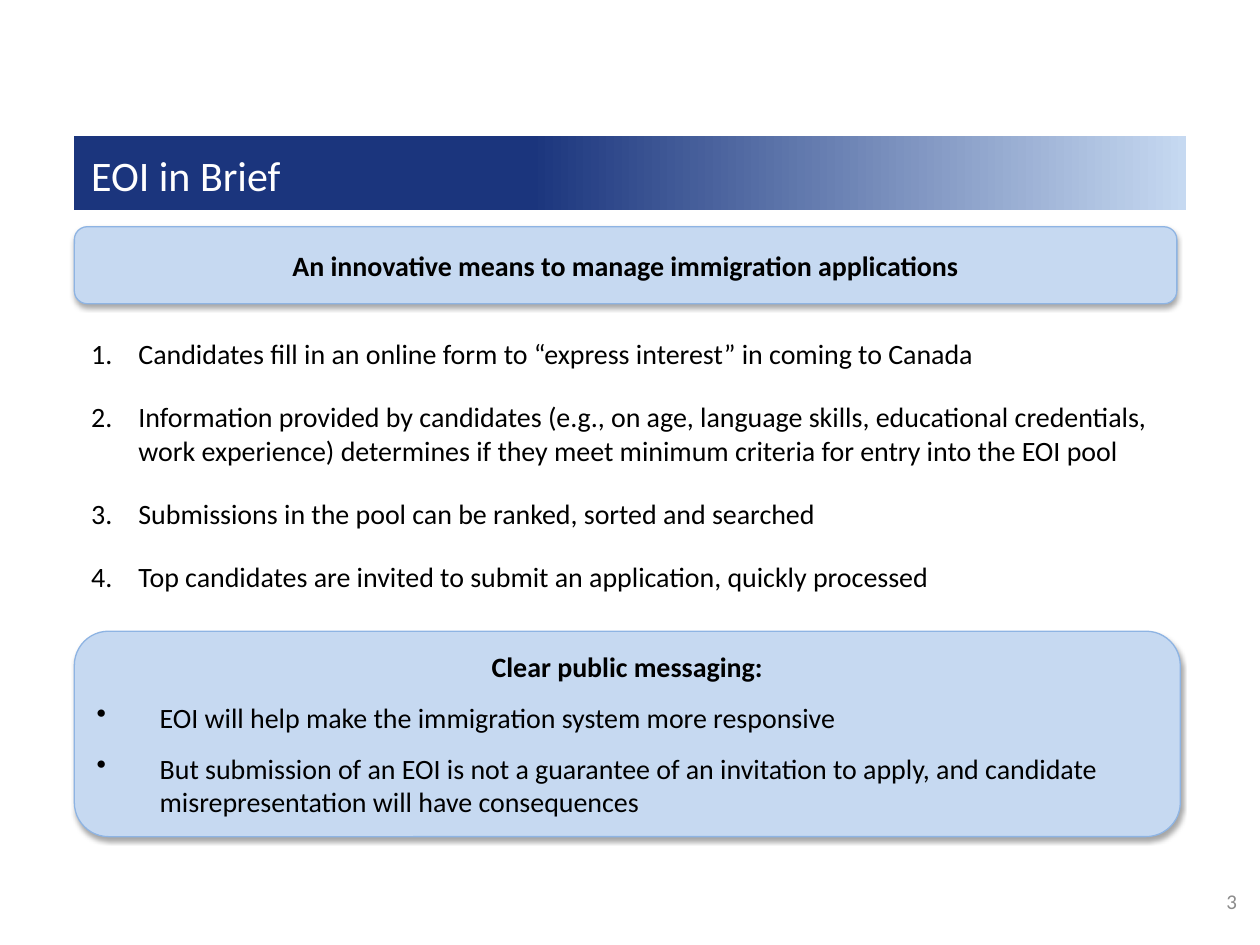
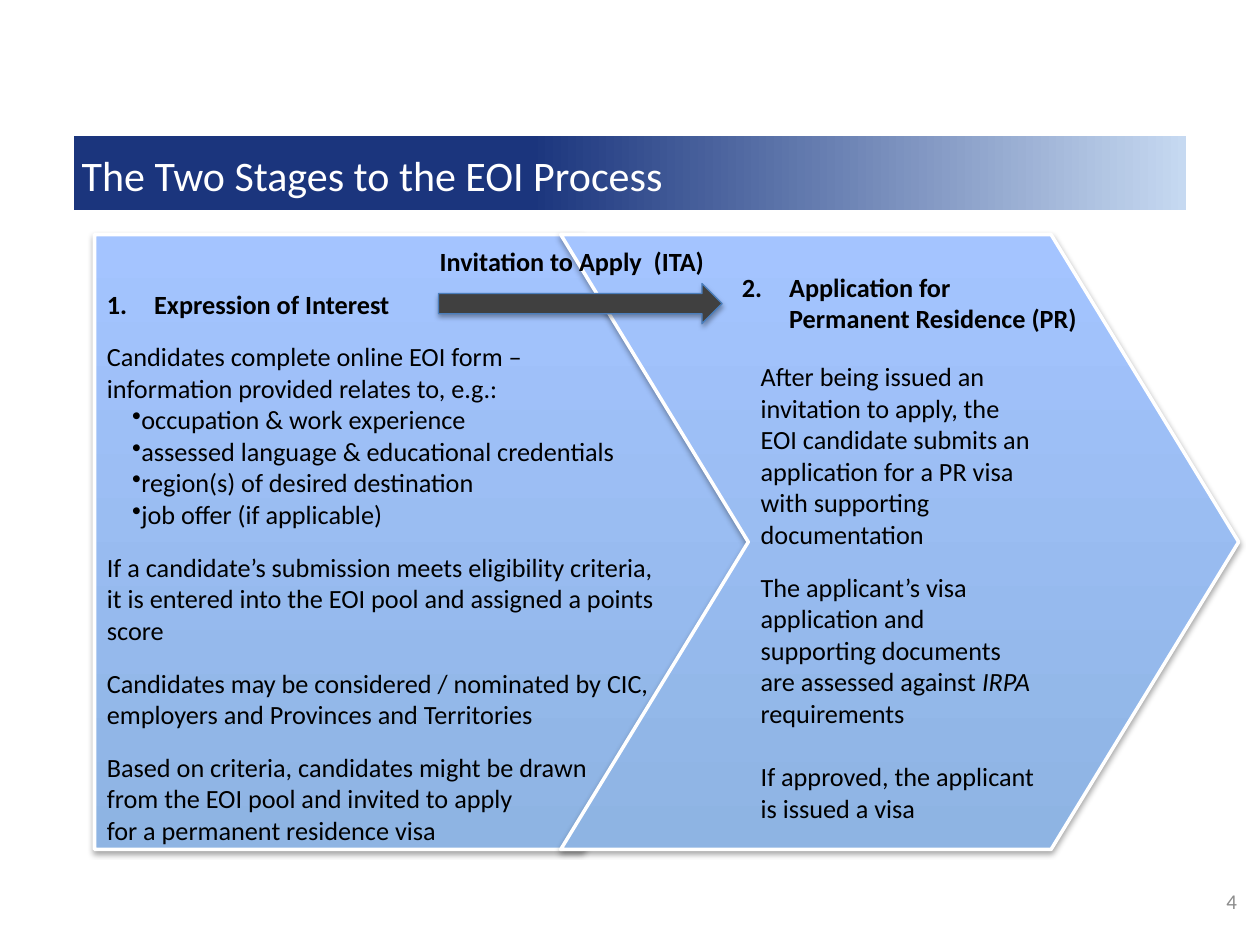
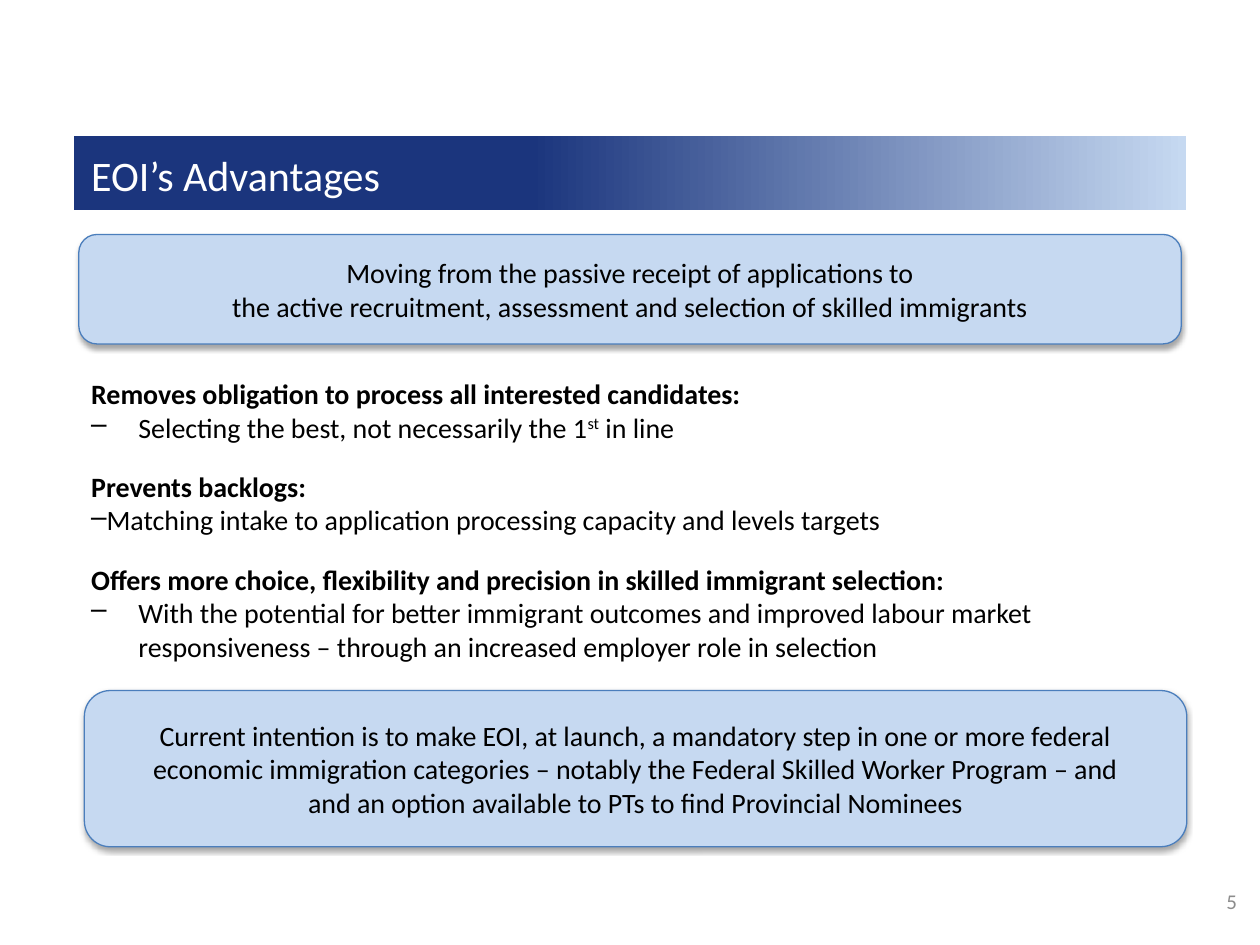
from dataclasses import dataclass
from typing import Optional

import pptx
import pptx.dml.color
import pptx.enum.shapes
import pptx.enum.text
import pptx.oxml
import pptx.oxml.ns
import pptx.util
from lxml import etree

Pt = pptx.util.Pt
Shapes = pptx.enum.shapes.MSO_SHAPE
Anchor = pptx.enum.text.MSO_ANCHOR
Align = pptx.enum.text.PP_ALIGN

FONT = "Calibri"
BLACK, WHITE, GREY = "000000", "FFFFFF", "8C8C8C"
NAVY, PALE_BLUE = "1B357D", "C6D9F1"
SOFT_BLUE, STRONG_BLUE = "8EB4E3", "4B7EBC"
STAGE_TOP, ARROW_GREY = "A4C4FF", "404040"
HANGING = 27
BULLET, DASH, NUMBER = "•", "–", "1."


@dataclass(frozen=True)
class Box:
    left: float
    top: float
    width: float
    height: float


@dataclass(frozen=True)
class Span:
    text: str
    italic: bool = False
    superscript: bool = False


@dataclass(frozen=True)
class Line:
    text: str
    bold: bool = False
    before: float = 0
    marker: str = ""
    start: int = 1
    margin: float = 0
    indent: float = 0
    align: Optional[Align] = None
    tail: tuple[Span, ...] = ()


@dataclass(frozen=True)
class Panel:
    box: Box
    lines: tuple[Line, ...] = ()
    size: float = 16
    kind: Shapes = Shapes.ROUNDED_RECTANGLE
    fill: str = PALE_BLUE
    gradient_end: str = ""
    line: str = SOFT_BLUE
    line_width: float = 0.75
    anchor: Anchor = Anchor.MIDDLE
    top_inset: float = 3.6
    adjustment: Optional[float] = None


@dataclass(frozen=True)
class Label:
    box: Box
    lines: tuple[Line, ...]
    size: float = 16
    color: str = BLACK
    anchor: Anchor = Anchor.TOP


@dataclass(frozen=True)
class Page:
    title: str
    number: int
    items: tuple[Panel | Label, ...]
    title_left: float = 45


def color_of(value: str) -> pptx.dml.color.RGBColor:
    return pptx.dml.color.RGBColor.from_string(value)


def hanging(text: str, marker: str, before: float = 0, margin: float = HANGING, **options) -> Line:
    return Line(text, marker=marker, before=before, margin=margin, indent=-margin, **options)


def centred(text: str, bold: bool = False) -> Line:
    return Line(text, bold=bold, align=Align.CENTER)


def add_marker(paragraph, line: Line) -> None:
    properties = paragraph._p.get_or_add_pPr()
    properties.set("marL", str(Pt(line.margin)))
    properties.set("indent", str(Pt(line.indent)))
    if line.marker == NUMBER:
        marker = etree.SubElement(properties, pptx.oxml.ns.qn("a:buAutoNum"), type="arabicPeriod")
        if line.start > 1:
            marker.set("startAt", str(line.start))
    elif line.marker:
        etree.SubElement(properties, pptx.oxml.ns.qn("a:buChar"), char=line.marker)


def write_lines(text_frame, lines: tuple[Line, ...], size: float, color: str) -> None:
    text_frame.word_wrap = True
    for index, line in enumerate(lines):
        paragraph = text_frame.add_paragraph() if index else text_frame.paragraphs[0]
        paragraph.text = line.text
        add_marker(paragraph, line)
        paragraph.alignment = line.align or Align.LEFT
        if line.before:
            paragraph.space_before = Pt(line.before)
        for span in line.tail:
            run = paragraph.add_run()
            run.text = span.text
            run.font.italic = span.italic
            if span.superscript:
                run._r.get_or_add_rPr().set("baseline", "30000")
        for run in paragraph.runs:
            run.font.name = FONT
            run.font.size = Pt(size)
            run.font.bold = line.bold
            run.font.color.rgb = color_of(color)


def place(box: Box) -> tuple:
    return Pt(box.left), Pt(box.top), Pt(box.width), Pt(box.height)


def fill_gradient(shape, start: str, end: str, angle: float, first_stop: float = 0) -> None:
    shape.fill.gradient()
    shape.fill.gradient_angle = angle
    stops = shape.fill.gradient_stops
    for stop, color, position in zip(stops, (start, end), (first_stop, 1)):
        stop.color.rgb = color_of(color)
        stop.position = position


def add_shadow(shape) -> None:
    shape.shadow.inherit = False
    effects = shape._element.spPr.find(pptx.oxml.ns.qn("a:effectLst"))
    effects.append(pptx.oxml.parse_xml(
        f'<a:outerShdw {pptx.oxml.ns.nsdecls("a")} blurRad="{Pt(3.1)}" dist="{Pt(1.8)}" '
        'dir="5400000" rotWithShape="0"><a:srgbClr val="000000"><a:alpha val="35000"/>'
        '</a:srgbClr></a:outerShdw>'))


def draw_panel(slide, panel: Panel) -> None:
    shape = slide.shapes.add_shape(panel.kind, *place(panel.box))
    if panel.adjustment is not None:
        shape.adjustments[0] = panel.adjustment
    if panel.gradient_end:
        fill_gradient(shape, panel.fill, panel.gradient_end, 90)
    else:
        shape.fill.solid()
        shape.fill.fore_color.rgb = color_of(panel.fill)
    shape.line.color.rgb = color_of(panel.line)
    shape.line.width = Pt(panel.line_width)
    add_shadow(shape)
    shape.text_frame.vertical_anchor = panel.anchor
    shape.text_frame.margin_top = Pt(panel.top_inset)
    write_lines(shape.text_frame, panel.lines, panel.size, BLACK)


def draw_label(slide, label: Label) -> None:
    shape = slide.shapes.add_textbox(*place(label.box))
    shape.text_frame.vertical_anchor = label.anchor
    write_lines(shape.text_frame, label.lines, label.size, label.color)


def draw_page(presentation, page: Page) -> None:
    slide = presentation.slides.add_slide(presentation.slide_layouts[6])
    band = slide.shapes.add_shape(Shapes.RECTANGLE, *place(Box(42.3, 77.7, 635.5, 42.3)))
    band.shadow.inherit = False
    band.line.fill.background()
    fill_gradient(band, NAVY, PALE_BLUE, 0, 0.41)
    draw_label(slide, Label(Box(page.title_left, 75.6, 630, 48), (Line(page.title),),
                            24, WHITE, Anchor.MIDDLE))
    for item in page.items:
        if isinstance(item, Panel):
            draw_panel(slide, item)
        else:
            draw_label(slide, item)
    draw_label(slide, Label(Box(648, 500.4, 66, 28.8),
                            (Line(str(page.number), align=Align.RIGHT),),
                            12, GREY, Anchor.MIDDLE))


def stage(box: Box, kind: Shapes, adjustment: float, top_inset: float,
          lines: tuple[Line, ...]) -> Panel:
    return Panel(box, lines, 15, kind, SOFT_BLUE, STAGE_TOP, WHITE, 2,
                 Anchor.TOP, top_inset, adjustment)


STEP_GAP, MESSAGE_GAP, STAGE_GAP, TOPIC_GAP = 17, 9.8, 12.2, 14.6

BRIEF = Page("EOI in Brief", 3, (
    Label(Box(45, 188.6, 630, 154.8), (
        hanging("Candidates fill in an online form to “express interest” in coming to Canada", NUMBER),
        hanging("Information provided by candidates (e.g., on age, language skills, educational "
                "credentials, work experience) determines if they meet minimum criteria for entry "
                "into the EOI pool", NUMBER, STEP_GAP),
        hanging("Submissions in the pool can be ranked, sorted and searched", NUMBER, STEP_GAP),
        hanging("Top candidates are invited to submit an application, quickly processed",
                NUMBER, STEP_GAP),
    )),
    Panel(Box(42.5, 360.7, 632, 117.4), (
        centred("Clear public messaging:", bold=True),
        hanging("EOI will help make the immigration system more responsive",
                BULLET, MESSAGE_GAP, 36),
        hanging("But submission of an EOI is not a guarantee of an invitation to apply, and "
                "candidate misrepresentation will have consequences", BULLET, MESSAGE_GAP, 36),
    )),
    Panel(Box(42.5, 129.6, 630, 44),
          (centred("An innovative means to manage immigration applications", bold=True),)),
))

FORM_TOPICS = (
    "occupation & work experience",
    "assessed language & educational credentials",
    "region(s) of desired destination",
    "job offer (if applicable)",
)

STAGES = Page("The Two Stages to the EOI Process", 4, (
    stage(Box(54, 134, 385.2, 351.4), Shapes.PENTAGON, 0.303, 30.5, (
        hanging("Expression of Interest", NUMBER, bold=True),
        Line("Candidates complete online EOI form –", before=STAGE_GAP),
        Line("information provided relates to, e.g.:"),
        *(Line(topic, marker=BULLET, indent=14.4) for topic in FORM_TOPICS),
        Line("If a candidate’s submission meets eligibility criteria, it is entered into the "
             "EOI pool and assigned a points score", before=STAGE_GAP),
        Line("Candidates may be considered / nominated by CIC, employers and Provinces and "
             "Territories", before=STAGE_GAP),
        Line("Based on criteria, candidates might be drawn", before=STAGE_GAP),
        Line("from the EOI pool and invited to apply"),
        Line("for a permanent residence visa"),
    )),
    stage(Box(320.4, 134, 387.4, 351.4), Shapes.CHEVRON, 0.305, 72, (
        Line("After being issued an invitation to apply, the EOI candidate submits an "
             "application for a PR visa with supporting documentation"),
        Line("The applicant’s visa application and supporting documents are assessed against ",
             before=STAGE_GAP, tail=(Span("IRPA ", italic=True), Span("requirements"))),
        Line("If approved, the applicant is issued a visa", before=18.3),
    )),
    Label(Box(416.9, 151.2, 221, 43.9), (
        hanging("Application for", NUMBER, start=2, bold=True),
        Line("Permanent Residence (PR)", bold=True, margin=HANGING),
    ), 15),
    Label(Box(235.4, 136.8, 182.9, 25.2), (centred("Invitation to Apply  (ITA)", bold=True),), 15),
    Panel(Box(250.6, 162, 162, 23), kind=Shapes.RIGHT_ARROW, fill=ARROW_GREY, line=STRONG_BLUE),
), title_left=39.6)

ADVANTAGES = Page("EOI’s Advantages", 5, (
    Label(Box(45, 211.7, 638, 172), (
        Line("Removes obligation to process all interested candidates:", bold=True),
        hanging("Selecting the best, not necessarily the 1", DASH,
                tail=(Span("st", superscript=True), Span(" in line"))),
        Line("Prevents backlogs:", bold=True, before=TOPIC_GAP),
        Line("Matching intake to application processing capacity and levels targets", marker=DASH),
        Line("Offers more choice, flexibility and precision in skilled immigrant selection:",
             bold=True, before=TOPIC_GAP),
        hanging("With the potential for better immigrant outcomes and improved labour market "
                "responsiveness – through an increased employer role in selection", DASH),
    )),
    Panel(Box(45, 134, 630, 62.6), (
        centred("Moving from the passive receipt of applications to"),
        centred("the active recruitment, assessment and selection of skilled immigrants"),
    ), line=STRONG_BLUE),
    Panel(Box(48.2, 394.6, 630, 89.3), (
        centred("Current intention is to make EOI, at launch, a mandatory step in one or more "
                "federal economic immigration categories – notably the Federal Skilled Worker "
                "Program – and"),
        centred("and an option available to PTs to find Provincial Nominees"),
    ), line=STRONG_BLUE),
))


def main() -> None:
    presentation = pptx.Presentation()
    presentation.slide_width, presentation.slide_height = Pt(720), Pt(540)
    for page in (BRIEF, STAGES, ADVANTAGES):
        draw_page(presentation, page)
    presentation.save("out.pptx")


if __name__ == "__main__":
    main()
